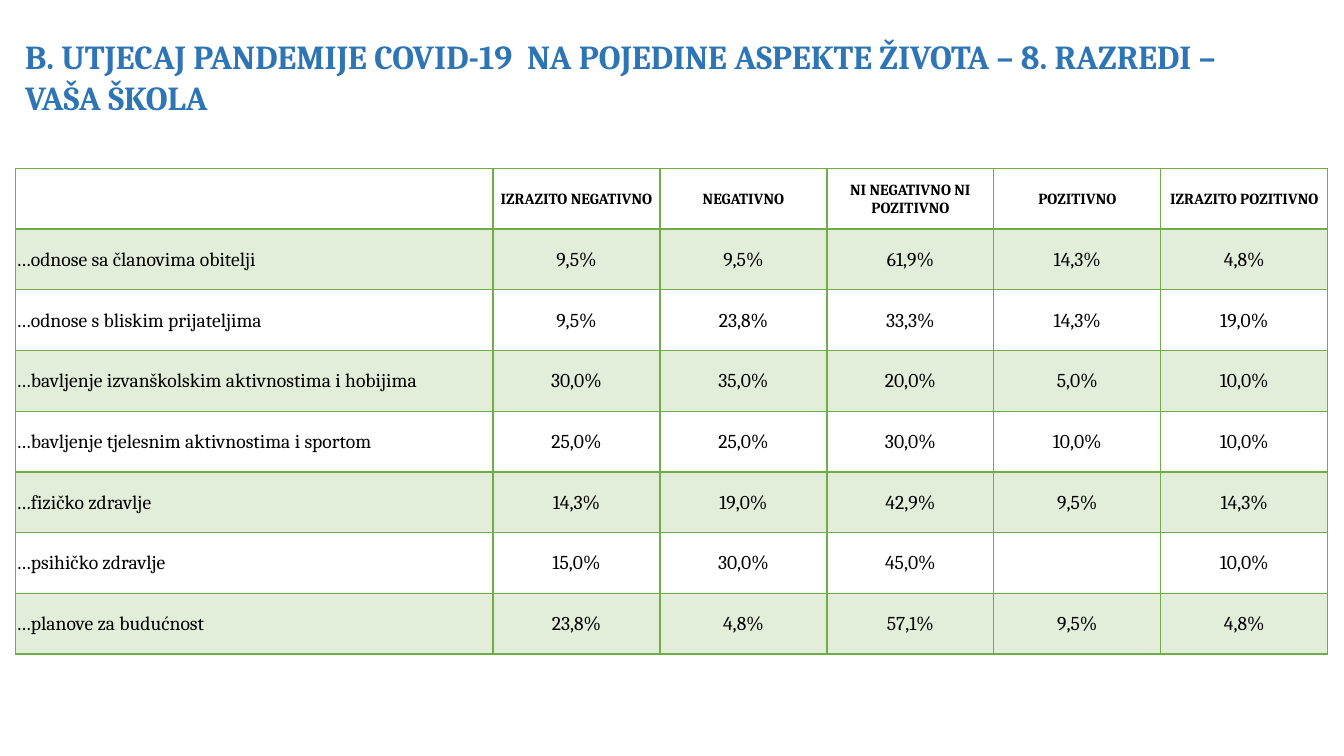
from lxml import etree
from pptx import Presentation
from pptx.dml.color import RGBColor
from pptx.enum.text import MSO_ANCHOR, PP_ALIGN
from pptx.oxml.ns import qn
from pptx.util import Inches, Pt

MIDDLE = MSO_ANCHOR.MIDDLE
LEFT, CENTER = PP_ALIGN.LEFT, PP_ALIGN.CENTER
BLUE = RGBColor(0x2E, 0x75, 0xB6)
GREEN = RGBColor(0x70, 0xAD, 0x47)
BLACK = RGBColor(0, 0, 0)
FONT = "Cambria"

TITLE = "B. UTJECAJ PANDEMIJE COVID-19  NA POJEDINE ASPEKTE ŽIVOTA – 8. RAZREDI – VAŠA ŠKOLA"
ROWS = [
    ("", "IZRAZITO NEGATIVNO", "NEGATIVNO", "NI NEGATIVNO NI POZITIVNO", "POZITIVNO", "IZRAZITO POZITIVNO"),
    ("…odnose sa članovima obitelji", "9,5%", "9,5%", "61,9%", "14,3%", "4,8%"),
    ("…odnose s bliskim prijateljima", "9,5%", "23,8%", "33,3%", "14,3%", "19,0%"),
    ("…bavljenje izvanškolskim aktivnostima i hobijima", "30,0%", "35,0%", "20,0%", "5,0%", "10,0%"),
    ("…bavljenje tjelesnim aktivnostima i sportom", "25,0%", "25,0%", "30,0%", "10,0%", "10,0%"),
    ("…fizičko zdravlje", "14,3%", "19,0%", "42,9%", "9,5%", "14,3%"),
    ("…psihičko zdravlje", "15,0%", "30,0%", "45,0%", "", "10,0%"),
    ("…planove za budućnost", "23,8%", "4,8%", "57,1%", "9,5%", "4,8%"),
]
TABLE_WIDTH, TABLE_HEIGHT = 13.02, 4.82
ASPECT_WIDTH = 4.74
ANSWER_WIDTH = (TABLE_WIDTH - ASPECT_WIDTH) / (len(ROWS[0]) - 1)


def write(paragraph, text, size, color, bold):
    paragraph.text = text
    for run in paragraph.runs:
        run.font.name = FONT
        run.font.size = Pt(size)
        run.font.bold = bold
        run.font.color.rgb = color


def add_borders(cell, bottom_width):
    properties = cell._tc.get_or_add_tcPr()
    widths = {"a:lnL": 1, "a:lnR": 1, "a:lnT": 1, "a:lnB": bottom_width}
    for position, (side, width) in enumerate(widths.items()):
        border = etree.Element(qn(side), w=str(Pt(width)))
        solid = etree.SubElement(border, qn("a:solidFill"))
        etree.SubElement(solid, qn("a:srgbClr"), val=str(GREEN))
        properties.insert(position, border)


def fill_band(cell):
    cell.fill.solid()
    cell.fill.fore_color.rgb = GREEN
    color = cell._tc.tcPr.find(qn("a:solidFill")).find(qn("a:srgbClr"))
    etree.SubElement(color, qn("a:alpha"), val="20000")


presentation = Presentation()
presentation.slide_width, presentation.slide_height = Inches(13.33), Inches(7.5)
slide = presentation.slides.add_slide(presentation.slide_layouts[6])

title = slide.shapes.add_textbox(Inches(0.15), Inches(0.31), Inches(12.48), Inches(0.91))
title.text_frame.word_wrap = True
write(title.text_frame.paragraphs[0], TITLE, 24, BLUE, True)

answers = slide.shapes.add_table(
    len(ROWS), len(ROWS[0]), Inches(0.15), Inches(1.67), Inches(TABLE_WIDTH), Inches(TABLE_HEIGHT)
).table
answers.first_row = False
answers.horz_banding = False
for number, column in enumerate(answers.columns):
    column.width = Inches(ANSWER_WIDTH if number else ASPECT_WIDTH)

for row_number, texts in enumerate(ROWS):
    header = row_number == 0
    answers.rows[row_number].height = Inches(TABLE_HEIGHT / len(ROWS))
    for column_number, text in enumerate(texts):
        cell = answers.cell(row_number, column_number)
        cell.margin_left = cell.margin_right = cell.margin_top = Inches(0.01)
        cell.margin_bottom = 0
        cell.vertical_anchor = MIDDLE
        paragraph = cell.text_frame.paragraphs[0]
        write(paragraph, text, 11 if header else 14, BLACK, header)
        paragraph.alignment = CENTER if column_number else LEFT
        if row_number % 2:
            fill_band(cell)
        else:
            cell.fill.background()
        add_borders(cell, 2 if header else 1)

presentation.save("out.pptx")
